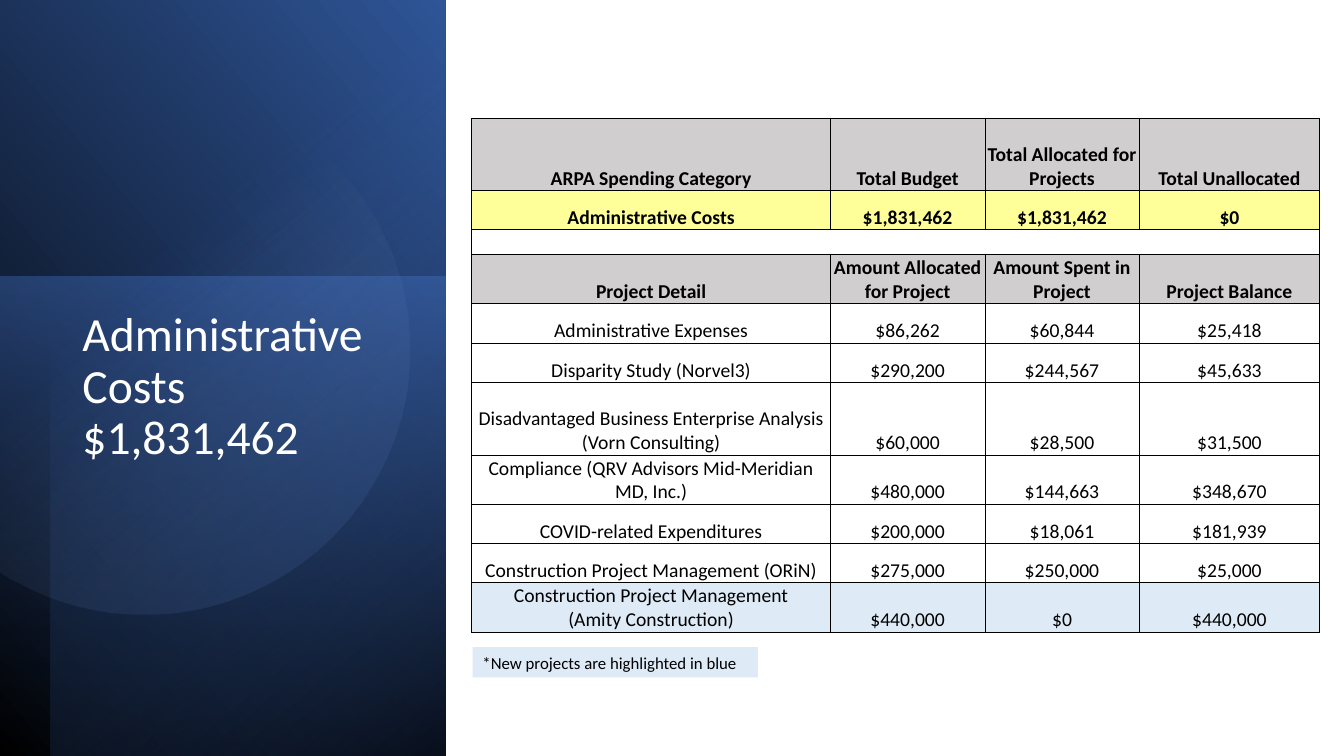
"""Build the administrative costs slide with its budget table."""
from math import cos, radians, sin

from lxml.etree import SubElement as Sub
from pptx import Presentation
from pptx.dml.color import RGBColor as RGB
from pptx.enum.shapes import MSO_SHAPE as Kind
from pptx.enum.text import MSO_ANCHOR as Anchor, PP_ALIGN as Align
from pptx.oxml.ns import qn
from pptx.util import Cm, Pt

BLACK = RGB(0x00, 0x00, 0x00)
WHITE = RGB(0xFF, 0xFF, 0xFF)
NAVY = RGB(0x20, 0x38, 0x64)
DEEP = RGB(0x2F, 0x55, 0x97)
BLUE = RGB(0x44, 0x72, 0xC4)
LIGHT = RGB(0x8F, 0xAA, 0xDC)
PALE = RGB(0xDE, 0xEB, 0xF7)
GREY = RGB(0xD0, 0xCE, 0xCE)
YELLOW = RGB(0xFF, 0xFF, 0x99)

PANELS = [
    ((-3.94, 3.94, 19.1, 11.23), 90, True, 310, [(0, BLACK, 100), (1, DEEP, 100)]),
    ((-0.43, 7.39, 12.09, 11.23), 270, False, 190, [(0, BLUE, 50), (1, NAVY, 0)]),
    ((-3.28, 4.55, 19.05, 9.96), 270, True, 220, [(0, BLACK, 59), (0.69, BLUE, 0)]),
]
COLS = [9.04, 3.89, 3.89, 4.55]
ROWS = [
    (1.83, GREY, True, ["ARPA Spending Category", "Total Budget",
                        "Total Allocated for Projects", "Total Unallocated"]),
    (0.99, YELLOW, True, ["Administrative Costs", "$1,831,462", "$1,831,462", "$0"]),
    (0.62, None, False, [""] * 4),
    (1.24, GREY, True, ["Project Detail", "Amount Allocated for Project",
                        "Amount Spent in Project", "Project Balance"]),
    (0.99, None, False, ["Administrative Expenses", "$86,262", "$60,844", "$25,418"]),
    (0.99, None, False, ["Disparity Study (Norvel3)", "$290,200", "$244,567", "$45,633"]),
    (1.83, None, False, ["Disadvantaged Business Enterprise Analysis (Vorn Consulting)",
                         "$60,000", "$28,500", "$31,500"]),
    (1.24, None, False, ["Compliance (QRV Advisors Mid-Meridian MD, Inc.)",
                         "$480,000", "$144,663", "$348,670"]),
    (0.99, None, False, ["COVID-related Expenditures", "$200,000", "$18,061", "$181,939"]),
    (0.99, None, False, ["Construction Project Management (ORiN)",
                         "$275,000", "$250,000", "$25,000"]),
    (1.24, PALE, False, ["Construction Project Management\n(Amity Construction)",
                         "$440,000", "$0", "$440,000"]),
]
GAP = 2


def put(item, vals):
    """Set each named value on the item."""
    for name, val in vals.items():
        setattr(item, name, val)


class Deck:
    """Hold the style and the current slide."""

    font = "Calibri"
    pad = {"margin_left": Cm(0.03), "margin_right": Cm(0.03),
           "margin_top": Cm(0.03), "margin_bottom": 0,
           "vertical_anchor": Anchor.BOTTOM}

    def __init__(self, show):
        """Add a blank slide."""
        self.shapes = show.slides.add_slide(show.slide_layouts[6]).shapes

    def words(self, frame, text, size, color, bold=False, **form):
        """Fill a text frame with styled paragraphs."""
        frame.text = text
        for para in frame.paragraphs:
            put(para, form)
            para._p.get_or_add_endParaRPr().set("sz", str(size * 100))
            for run in para.runs:
                put(run.font, {"name": self.font, "size": Pt(size), "bold": bold})
                run.font.color.rgb = color

    def shade(self, shape, angle, stops):
        """Give a shape a gradient with see-through stops."""
        shape.shadow.inherit = False
        shape.line.fill.background()
        shape.fill.gradient()
        shape.fill.gradient_angle = 360 - angle
        for stop, (place, color, alpha) in zip(shape.fill.gradient_stops, stops):
            stop.position = place
            stop.color.rgb = color
            Sub(stop._gs[0], qn("a:alpha"), val=str(alpha * 1000))

    def panel(self, box, turn, flip, angle, stops):
        """Add a turned gradient panel."""
        shape = self.shapes.add_shape(Kind.RECTANGLE, *map(Cm, box))
        shape.rotation = turn
        if flip:
            shape._element.spPr.xfrm.set("flipH", "1")
        self.shade(shape, angle, stops)

    def disc(self, x, y, size, reach, angle, stops):
        """Add a disc cut off by an upright chord on its left."""
        dots = [(Cm(x + size * cos(radians(a))), Cm(y + size * sin(radians(a))))
                for a in range(-reach, reach + 1, 3)]
        form = self.shapes.build_freeform(*dots[0])
        form.add_line_segments(dots[1:], close=True)
        self.shade(form.convert_to_shape(), angle, stops)

    def label(self, box, text, size, color, fill=None, anchor=Anchor.TOP, **form):
        """Add a text box."""
        shape = self.shapes.add_textbox(*map(Cm, box))
        put(shape.text_frame, {"word_wrap": True, "vertical_anchor": anchor})
        if fill:
            shape.fill.solid()
            shape.fill.fore_color.rgb = fill
        self.words(shape.text_frame, text, size, color, **form)

    def edge(self, cell):
        """Draw thin black borders round a cell."""
        props = cell._tc.get_or_add_tcPr()
        for side in "LRTB":
            line = Sub(props, qn(f"a:ln{side}"), w=str(Pt(0.5)))
            Sub(Sub(line, qn("a:solidFill")), qn("a:srgbClr"), val=str(BLACK))

    def table(self, x, y, cols, rows):
        """Add a bordered table with one fill per row."""
        tall = sum(row[0] for row in rows)
        grid = self.shapes.add_table(len(rows), len(cols), Cm(x), Cm(y),
                                     Cm(sum(cols)), Cm(tall)).table
        put(grid, {"first_row": False, "horz_banding": False})
        for col, wide in zip(grid.columns, cols):
            col.width = Cm(wide)
        for row, (high, fill, bold, texts) in zip(grid.rows, rows):
            row.height = Cm(high)
            for cell, text in zip(row.cells, texts):
                put(cell, self.pad)
                self.edge(cell)
                if fill:
                    cell.fill.solid()
                    cell.fill.fore_color.rgb = fill
                else:
                    cell.fill.background()
                self.words(cell.text_frame, text, 14, BLACK, bold,
                           alignment=Align.CENTER)
        return grid


def main():
    """Build and save the slide."""
    show = Presentation()
    put(show, {"slide_width": Cm(33.87), "slide_height": Cm(19.05)})
    deck = Deck(show)
    for panel in PANELS:
        deck.panel(*panel)
    deck.disc(3.63, 8.81, 6.68, 123, 51, [(0.39, LIGHT, 0), (1, DEEP, 26)])
    deck.label((1.83, 7.7, 8, 8.53), "Administrative Costs $1,831,462", 34, WHITE,
               line_spacing=0.9)
    grid = deck.table(11.89, 2.97, COLS, ROWS)
    grid.cell(GAP, 0).merge(grid.cell(GAP, len(COLS) - 1))
    deck.label((11.91, 16.31, 7.19, 0.76), "*New projects are highlighted in blue",
               12, BLACK, PALE, Anchor.MIDDLE)
    show.save("out.pptx")


if __name__ == "__main__":
    main()
